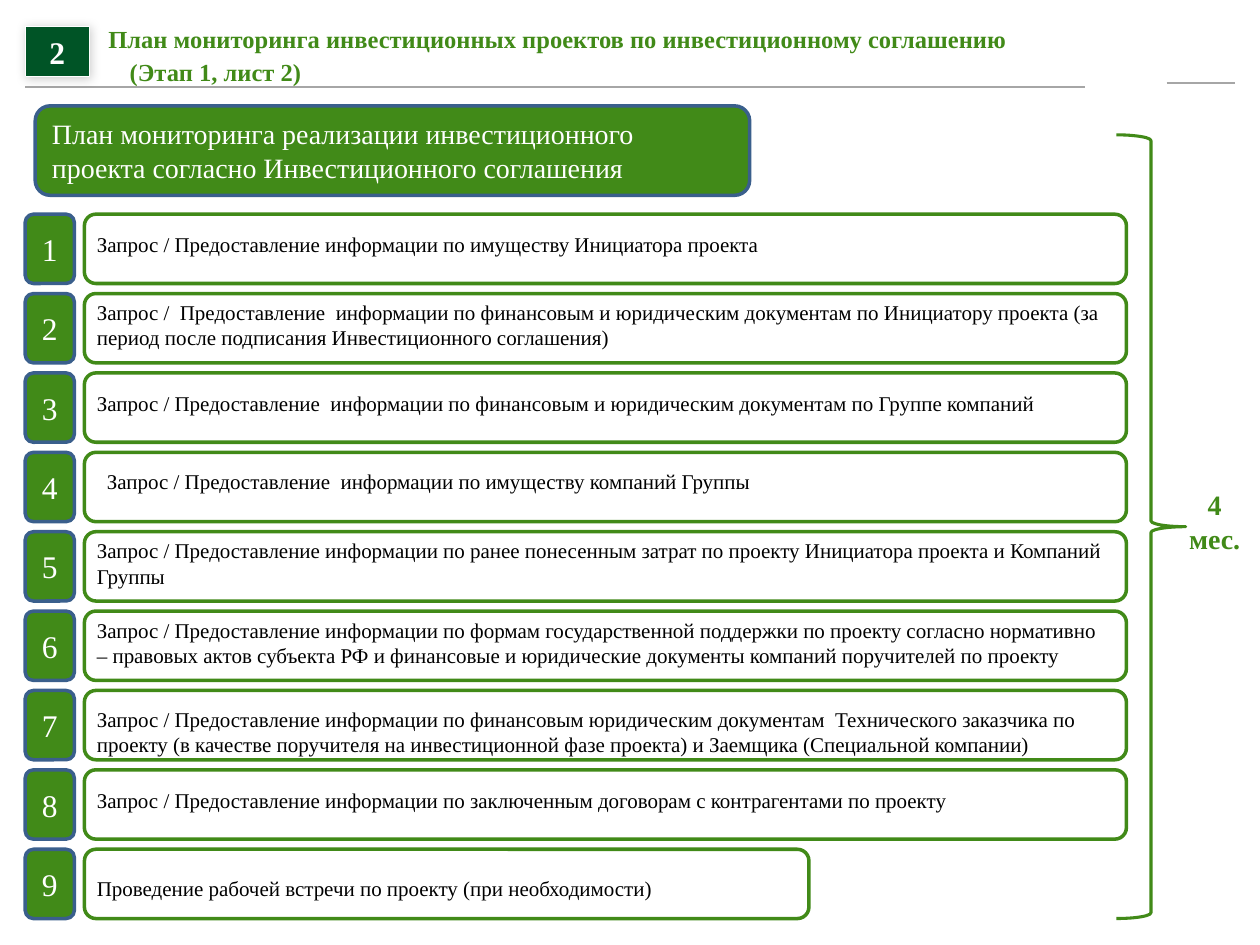
from dataclasses import dataclass

from lxml.etree import SubElement
from pptx import Presentation
from pptx.dml.color import RGBColor
from pptx.enum.shapes import MSO_CONNECTOR as Connector, MSO_SHAPE as Shape
from pptx.enum.text import MSO_ANCHOR as Anchor, MSO_AUTO_SIZE as AutoSize, PP_ALIGN as Align
from pptx.oxml.ns import qn
from pptx.util import Inches, Pt

COLORS = {"green": "418A18", "dark": "005426", "edge": "3A5F8C", "rule": "A6A6A6",
          "white": "FFFFFF", "black": "000000"}
FONT = "Times New Roman"

# Grid of the numbered steps, in inches
FIRST_ROW, ROW_PITCH, ROW_HEIGHT = 1.7, 0.63, 0.55
NUMBER_LEFT, NUMBER_WIDTH = 0.2, 0.39
FRAME_LEFT, FRAME_WIDTH = 0.67, 8.27
LABEL_WIDTH = 8.19


@dataclass
class Step:
    text: str
    drop: float = 0.09  # label offset below the top of its row
    height: float = 0.3
    left: float = FRAME_LEFT
    label_width: float = LABEL_WIDTH
    frame_width: float = FRAME_WIDTH


STEPS = [
    Step("Запрос / Предоставление информации по имуществу Инициатора проекта"),
    Step("Запрос /  Предоставление  информации по финансовым и юридическим документам по "
         "Инициатору проекта (за период после подписания Инвестиционного соглашения)", 0, 0.5),
    Step("Запрос / Предоставление  информации по финансовым и юридическим документам по "
         "Группе компаний"),
    Step("Запрос / Предоставление  информации по имуществу компаний Группы", 0.08, left=0.75),
    Step("Запрос / Предоставление информации по ранее понесенным затрат по проекту "
         "Инициатора проекта и Компаний Группы", 0, 0.5),
    Step("Запрос / Предоставление информации по формам государственной поддержки по проекту "
         "согласно нормативно – правовых актов субъекта РФ и финансовые и юридические "
         "документы компаний поручителей по проекту", 0, 0.5),
    Step("Запрос / Предоставление информации по финансовым юридическим документам  "
         "Технического заказчика по проекту (в качестве поручителя на инвестиционной фазе "
         "проекта) и Заемщика (Специальной компании)", 0.08, 0.5),
    Step("Запрос / Предоставление информации по заключенным договорам с контрагентами по "
         "проекту", label_width=7.03),
    Step("Проведение рабочей встречи по проекту (при необходимости)", 0.16,
         label_width=4.66, frame_width=5.75),
]


def rgb(name: str) -> RGBColor:
    return RGBColor.from_string(COLORS[name])


def write(frame, text: str, size: float, color: str, bold: bool = False,
          align=Align.LEFT, anchor=Anchor.TOP, wrap: bool = True) -> None:
    frame.text = text
    frame.word_wrap = wrap
    frame.vertical_anchor = anchor
    for paragraph in frame.paragraphs:
        paragraph.alignment = align
        for run in paragraph.runs:
            font = run.font
            font.name, font.size, font.bold = FONT, Pt(size), bold
            font.color.rgb = rgb(color)


def add_box(slide, kind, left: float, top: float, width: float, height: float,
            line: str, weight: float, fill: str | None = None):
    box = slide.shapes.add_shape(kind, *map(Inches, (left, top, width, height)))
    box.shadow.inherit = False
    if fill:
        box.fill.solid()
        box.fill.fore_color.rgb = rgb(fill)
    else:
        box.fill.background()
    box.line.color.rgb = rgb(line)
    box.line.width = Pt(weight)
    return box


def add_label(slide, left: float, top: float, width: float, height: float):
    return slide.shapes.add_textbox(*map(Inches, (left, top, width, height))).text_frame


def add_rule(slide, left: float, right: float, y: float) -> None:
    rule = slide.shapes.add_connector(Connector.STRAIGHT, *map(Inches, (left, y, right, y)))
    rule.line.color.rgb = rgb("rule")
    rule.line.width = Pt(1)
    SubElement(rule._element.spPr, qn("a:effectLst"))


def add_soft_shadow(box) -> None:
    effects = box._element.spPr.find(qn("a:effectLst"))
    shadow = SubElement(effects, qn("a:outerShdw"), blurRad=str(Pt(6)), dist=str(Pt(1)),
                        dir=str(45 * 60000), algn="tl", rotWithShape="0")
    color = SubElement(shadow, qn("a:srgbClr"), val=COLORS["black"])
    SubElement(color, qn("a:alpha"), val="20000")


def add_header(slide) -> None:
    add_rule(slide, 0.2, 8.61, 0.69)
    add_rule(slide, 9.26, 9.8, 0.66)
    title = add_label(slide, 0.75, 0.13, 7.53, 0.58)
    title.margin_left = title.margin_right = title.margin_top = title.margin_bottom = 0
    write(title, "План мониторинга инвестиционных проектов по инвестиционному соглашению\n"
                 "(Этап 1, лист 2)", 14, "green", bold=True, anchor=Anchor.MIDDLE)
    for paragraph, indent in zip(title.paragraphs, (0.11, 0.28)):
        paragraph.line_spacing = 1.15
        paragraph._p.get_or_add_pPr().set("marL", str(Inches(indent)))
    badge = add_box(slide, Shape.RECTANGLE, 0.2, 0.21, 0.51, 0.4, "white", 0.75, "dark")
    add_soft_shadow(badge)
    write(badge.text_frame, "2", 18, "white", bold=True, align=Align.CENTER)


def add_step(slide, number: int, step: Step) -> None:
    top = FIRST_ROW + (number - 1) * ROW_PITCH
    tile = add_box(slide, Shape.ROUNDED_RECTANGLE, NUMBER_LEFT, top, NUMBER_WIDTH,
                   ROW_HEIGHT, "edge", 2, "green")
    write(tile.text_frame, str(number), 18, "white", align=Align.CENTER, anchor=Anchor.MIDDLE)
    add_box(slide, Shape.ROUNDED_RECTANGLE, FRAME_LEFT, top, step.frame_width, ROW_HEIGHT,
            "green", 2)
    label = add_label(slide, step.left, top + step.drop, step.label_width, step.height)
    write(label, step.text, 12, "black", wrap=step.label_width == LABEL_WIDTH)
    label.auto_size = AutoSize.SHAPE_TO_FIT_TEXT


def main() -> None:
    deck = Presentation()
    deck.slide_width, deck.slide_height = Inches(10), Inches(7.5)
    slide = deck.slides.add_slide(deck.slide_layouts[6])

    add_header(slide)

    # Heading of the plan
    heading = add_box(slide, Shape.ROUNDED_RECTANGLE, 0.28, 0.84, 5.67, 0.71,
                      "edge", 2, "green")
    write(heading.text_frame, "План мониторинга реализации инвестиционного проекта согласно "
          "Инвестиционного соглашения", 16, "white", anchor=Anchor.MIDDLE)

    # Numbered steps
    for number, step in enumerate(STEPS, 1):
        add_step(slide, number, step)

    # Overall duration
    add_box(slide, Shape.RIGHT_BRACE, 8.86, 1.07, 0.55, 6.22, "green", 1.75)
    duration = add_label(slide, 9.33, 3.82, 0.62, 0.64)
    write(duration, "4\nмес.", 16, "green", bold=True, align=Align.CENTER, wrap=False)
    duration.auto_size = AutoSize.SHAPE_TO_FIT_TEXT

    deck.save("out.pptx")


if __name__ == "__main__":
    main()
